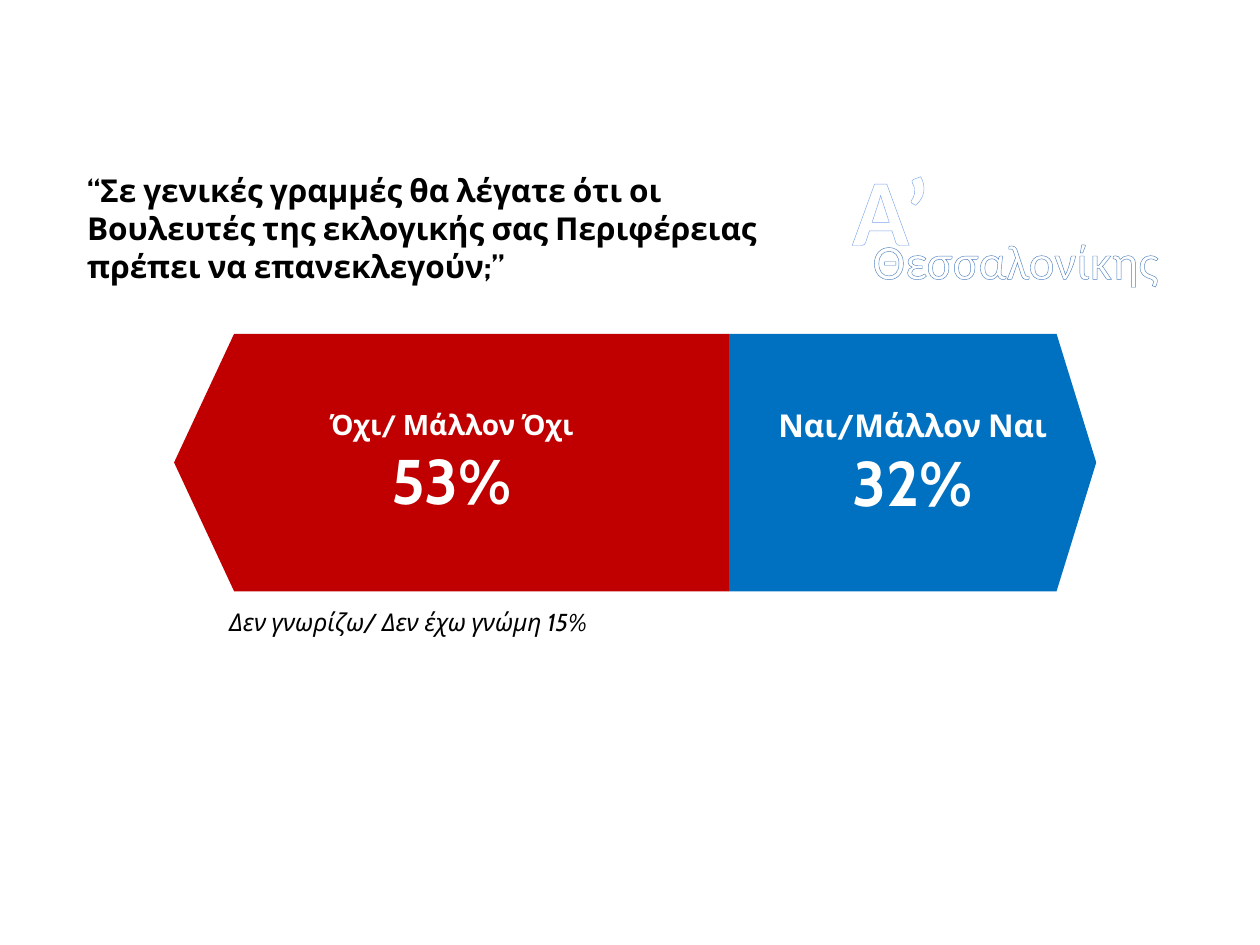
"""Build a slide showing a two-way poll result as opposed arrow blocks."""
from dataclasses import dataclass

from lxml import etree
from pptx import Presentation
from pptx.dml.color import RGBColor
from pptx.enum.text import MSO_ANCHOR, MSO_AUTO_SIZE, PP_ALIGN
from pptx.oxml.ns import qn
from pptx.util import Cm, Pt

TOP, MIDDLE = MSO_ANCHOR.TOP, MSO_ANCHOR.MIDDLE
LEFT, CENTER = PP_ALIGN.LEFT, PP_ALIGN.CENTER
GROW = MSO_AUTO_SIZE.SHAPE_TO_FIT_TEXT
FIXED = MSO_AUTO_SIZE.NONE
WHITE, BLACK = "FFFFFF", "000000"
UPPER, LOWER, SPLIT = 6.73, 11.92, 14.7


@dataclass
class Line:
    """One paragraph and its look."""
    text: str
    size: float
    color: str = WHITE
    font: str = "Cabin"
    bold: bool = False
    italic: bool = False
    edge: str = ""
    width: float = 0


@dataclass
class Block:
    """One side of the result, from the split to its tip."""
    side: float
    tip: float
    fill: str
    lines: list[Line]


@dataclass
class Label:
    """One free line of text and its box."""
    box: tuple[float, float, float, float]
    line: Line
    align: PP_ALIGN


QUERY = Line("“Σε γενικές γραμμές θα λέγατε ότι οι Βουλευτές της εκλογικής "
             "σας Περιφέρειας πρέπει να επανεκλεγούν;”", 18, BLACK, bold=True)
BLOCKS = [
    Block(4.72, 3.51, "C00000", [Line("Όχι/ Μάλλον Όχι", 16, bold=True),
                                 Line("53%", 36, bold=True)]),
    Block(21.3, 22.1, "0070C0", [Line("Ναι/Μάλλον Ναι", 18, bold=True),
                                 Line("32%", 36, bold=True)]),
]
LABELS = [
    Label((4.37, 12.12, 8.13, 0.86),
          Line("Δεν γνωρίζω/ Δεν έχω γνώμη 15%", 14, BLACK, italic=True), LEFT),
    Label((16.89, 2.92, 2.13, 2.57),
          Line("A’", 54, font="Calibri", bold=True, edge="7EA6EA", width=2.48), CENTER),
    Label((17.3, 4.52, 6.35, 1.45),
          Line("Θεσσαλονίκης", 28, font="Calibri", edge="4F81BD", width=0.8), CENTER),
]


def tint(code: str) -> RGBColor:
    """Turn a hex string into a colour."""
    return RGBColor.from_string(code)


def trace(run, edge: str, width: float) -> None:
    """Outline the letters of a run."""
    line = etree.Element(qn("a:ln"), w=str(Pt(width)))
    fill = etree.SubElement(line, qn("a:solidFill"))
    etree.SubElement(fill, qn("a:srgbClr"), val=edge)
    run.font._element.insert(0, line)


def write(frame, lines: list[Line], align: PP_ALIGN, **form) -> None:
    """Fill a text frame with formatted paragraphs."""
    for name, value in form.items():
        setattr(frame, name, value)
    for spot, line in enumerate(lines):
        para = frame.paragraphs[0] if spot == 0 else frame.add_paragraph()
        para.alignment = align
        run = para.add_run()
        run.text = line.text
        look = {"name": line.font, "size": Pt(line.size),
                "bold": line.bold, "italic": line.italic}
        for name, value in look.items():
            setattr(run.font, name, value)
        run.font.color.rgb = tint(line.color)
        if line.edge:
            trace(run, line.edge, line.width)


def draw_block(slide, block: Block) -> None:
    """Draw one pointed block with its share."""
    nodes = [(SPLIT, LOWER), (SPLIT, UPPER), (block.side, UPPER),
             (block.tip, (UPPER + LOWER) / 2)]
    pen = slide.shapes.build_freeform(Cm(block.side), Cm(LOWER))
    pen.add_line_segments([(Cm(x), Cm(y)) for x, y in nodes], close=True)
    shape = pen.convert_to_shape()
    shape.shadow.inherit = False
    shape.fill.solid()
    shape.fill.fore_color.rgb = tint(block.fill)
    shape.line.fill.background()
    write(shape.text_frame, block.lines, CENTER,
          word_wrap=False, vertical_anchor=MIDDLE)


def draw_label(slide, label: Label) -> None:
    """Draw one free line of text."""
    shape = slide.shapes.add_textbox(*map(Cm, label.box))
    write(shape.text_frame, [label.line], label.align,
          word_wrap=False, auto_size=GROW)


def main() -> None:
    """Build and save the slide."""
    deck = Presentation()
    deck.slide_width, deck.slide_height = Cm(25.4), Cm(19.05)
    slide = deck.slides.add_slide(deck.slide_layouts[5])
    title = slide.shapes.title
    place = {"left": 1.5, "top": 3.33, "width": 15.6, "height": 2.57}
    for name, value in place.items():
        setattr(title, name, Cm(value))
    write(title.text_frame, [QUERY], LEFT,
          word_wrap=True, vertical_anchor=TOP, auto_size=FIXED)
    for block in BLOCKS:
        draw_block(slide, block)
    for label in LABELS:
        draw_label(slide, label)
    deck.save("out.pptx")


if __name__ == "__main__":
    main()
